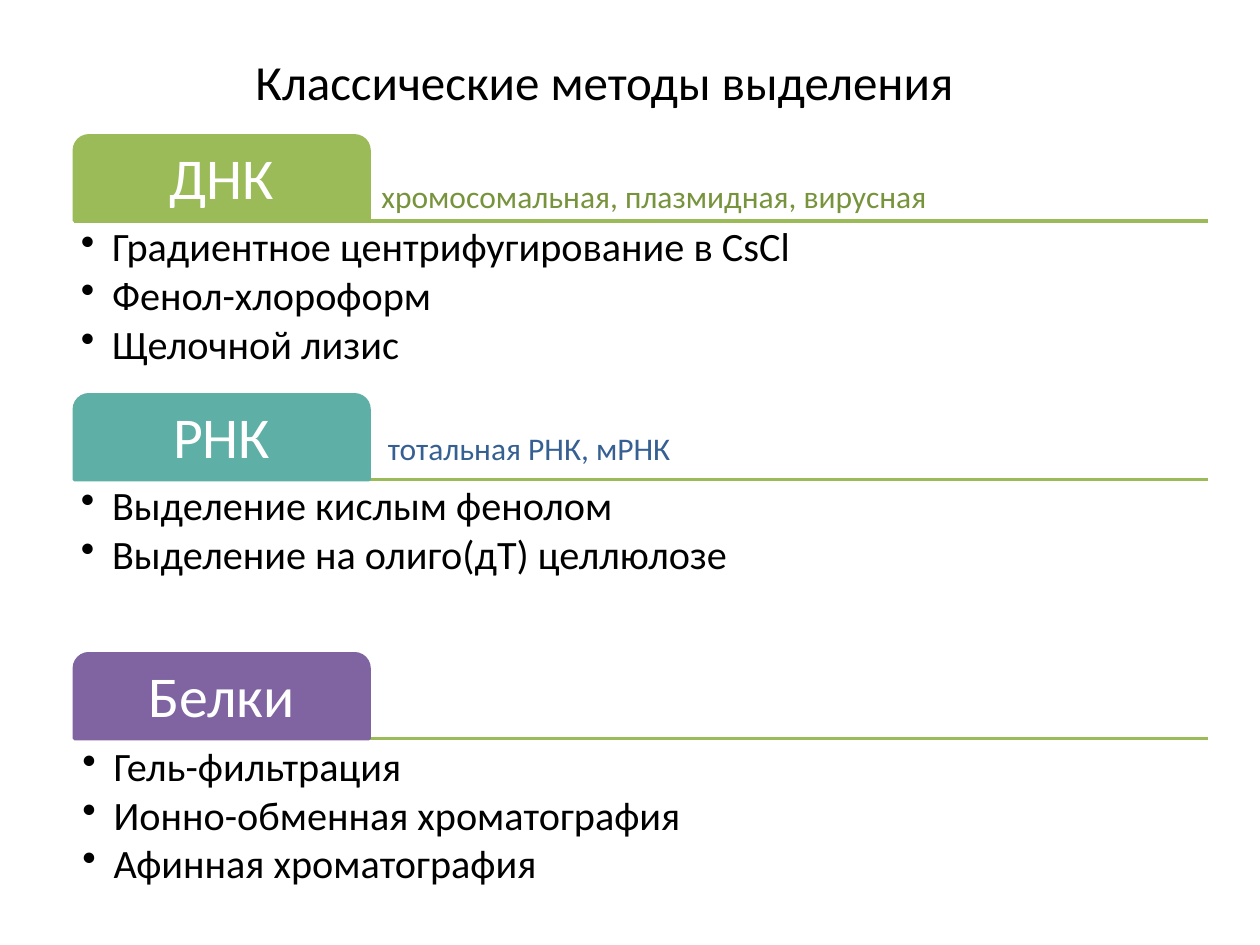
from lxml import etree
from pptx import Presentation
from pptx import util as u
from pptx.dml.color import RGBColor
from pptx.enum import shapes, text
from pptx.oxml.ns import qn

LEFT, WIDTH = 1.5, 22.86
TAB_W, TAB_H = 5.94, 1.71
FIRST_LINE, PITCH = 4.45, 5.22
BODY_H = 3.43
GREEN = "9BBB59"

SECTIONS = [
    ("ДНК", GREEN, 0.13,
     ("хромосомальная, плазмидная, вирусная", "77933C", 0.25, 0.1),
     ["Градиентное центрифугирование в CsCl", "Фенол-хлороформ", "Щелочной лизис"]),
    ("РНК", "5EAFA6", 0.13,
     ("тотальная РНК, мРНК", "376092", 0.38, 0.24),
     ["Выделение кислым фенолом", "Выделение на олиго(дТ) целлюлозе"]),
    ("Белки", "8064A2", 0.16, None,
     ["Гель-фильтрация", "Ионно-обменная хроматография", "Афинная хроматография"]),
]


def rgb(value):
    return RGBColor.from_string(value)


def add_run(p, content, size, color):
    r = p.add_run()
    r.text = content
    r.font.size = u.Pt(size)
    r.font.name = "Calibri"
    r.font.color.rgb = rgb(color)


def set_frame(tf, anchor, left, top, right, bottom):
    tf.word_wrap = True
    tf.vertical_anchor = anchor
    tf.margin_left, tf.margin_top = u.Cm(left), u.Cm(top)
    tf.margin_right, tf.margin_bottom = u.Cm(right), u.Cm(bottom)


def add_title(s, content):
    sp = s.shapes.title
    sp.left, sp.top, sp.width, sp.height = u.Cm(4.9), u.Cm(0.91), u.Cm(16.79), u.Cm(1.45)
    tf = sp.text_frame
    set_frame(tf, text.MSO_ANCHOR.TOP, 0.25, 0.13, 0.25, 0.13)
    p = tf.paragraphs[0]
    p.alignment = text.PP_ALIGN.LEFT
    add_run(p, content, 28, "000000")


def add_rule(s, y):
    line = s.shapes.add_connector(
        shapes.MSO_CONNECTOR.STRAIGHT, u.Cm(LEFT), u.Cm(y), u.Cm(LEFT + WIDTH), u.Cm(y))
    line.line.color.rgb = rgb(GREEN)
    line.line.width = u.Pt(2)
    etree.SubElement(line._element.spPr, qn("a:effectLst"))


def add_tab(s, y, label, color):
    sp = s.shapes.add_shape(
        shapes.MSO_SHAPE.ROUND_2_SAME_RECTANGLE,
        u.Cm(LEFT), u.Cm(y - TAB_H), u.Cm(TAB_W), u.Cm(TAB_H))
    sp.adjustments[0] = 0.17
    sp.adjustments[1] = 0
    sp.shadow.inherit = False
    sp.fill.solid()
    sp.fill.fore_color.rgb = rgb(color)
    sp.line.color.rgb = rgb(color)
    sp.line.width = u.Pt(2)
    set_frame(sp.text_frame, text.MSO_ANCHOR.MIDDLE, 0.17, 0.17, 0.17, 0.17)
    p = sp.text_frame.paragraphs[0]
    p.alignment = text.PP_ALIGN.CENTER
    p.line_spacing = 0.9
    add_run(p, label, 33, "FFFFFF")


def add_subtitle(s, y, content, color, left, bottom):
    sp = s.shapes.add_textbox(
        u.Cm(LEFT + TAB_W), u.Cm(y - TAB_H), u.Cm(WIDTH - TAB_W), u.Cm(TAB_H))
    set_frame(sp.text_frame, text.MSO_ANCHOR.BOTTOM, left, 0.1, 0.1, bottom)
    p = sp.text_frame.paragraphs[0]
    p.line_spacing = 0.9
    add_run(p, content, 18, color)


def add_bullets(s, y, items, inset):
    sp = s.shapes.add_textbox(u.Cm(LEFT), u.Cm(y), u.Cm(WIDTH), u.Cm(BODY_H))
    tf = sp.text_frame
    set_frame(tf, text.MSO_ANCHOR.TOP, inset, inset, inset, inset)
    for i, item in enumerate(items):
        p = tf.add_paragraph() if i else tf.paragraphs[0]
        pPr = p._p.get_or_add_pPr()
        pPr.set("marL", str(u.Cm(0.63)))
        pPr.set("indent", str(-u.Cm(0.63)))
        etree.SubElement(pPr, qn("a:buChar")).set("char", "•")
        p.line_spacing = 0.9
        p.space_after = u.Pt(3)
        add_run(p, item, 23, "000000")


def main():
    prs = Presentation()
    prs.slide_width, prs.slide_height = u.Cm(25.4), u.Cm(19.05)
    s = prs.slides.add_slide(prs.slide_layouts[5])
    add_title(s, "Классические методы выделения")
    for i, (label, color, inset, subtitle, items) in enumerate(SECTIONS):
        y = FIRST_LINE + i * PITCH
        add_rule(s, y)
        add_tab(s, y, label, color)
        if subtitle:
            add_subtitle(s, y, *subtitle)
        add_bullets(s, y, items, inset)
    prs.save("out.pptx")


if __name__ == "__main__":
    main()
